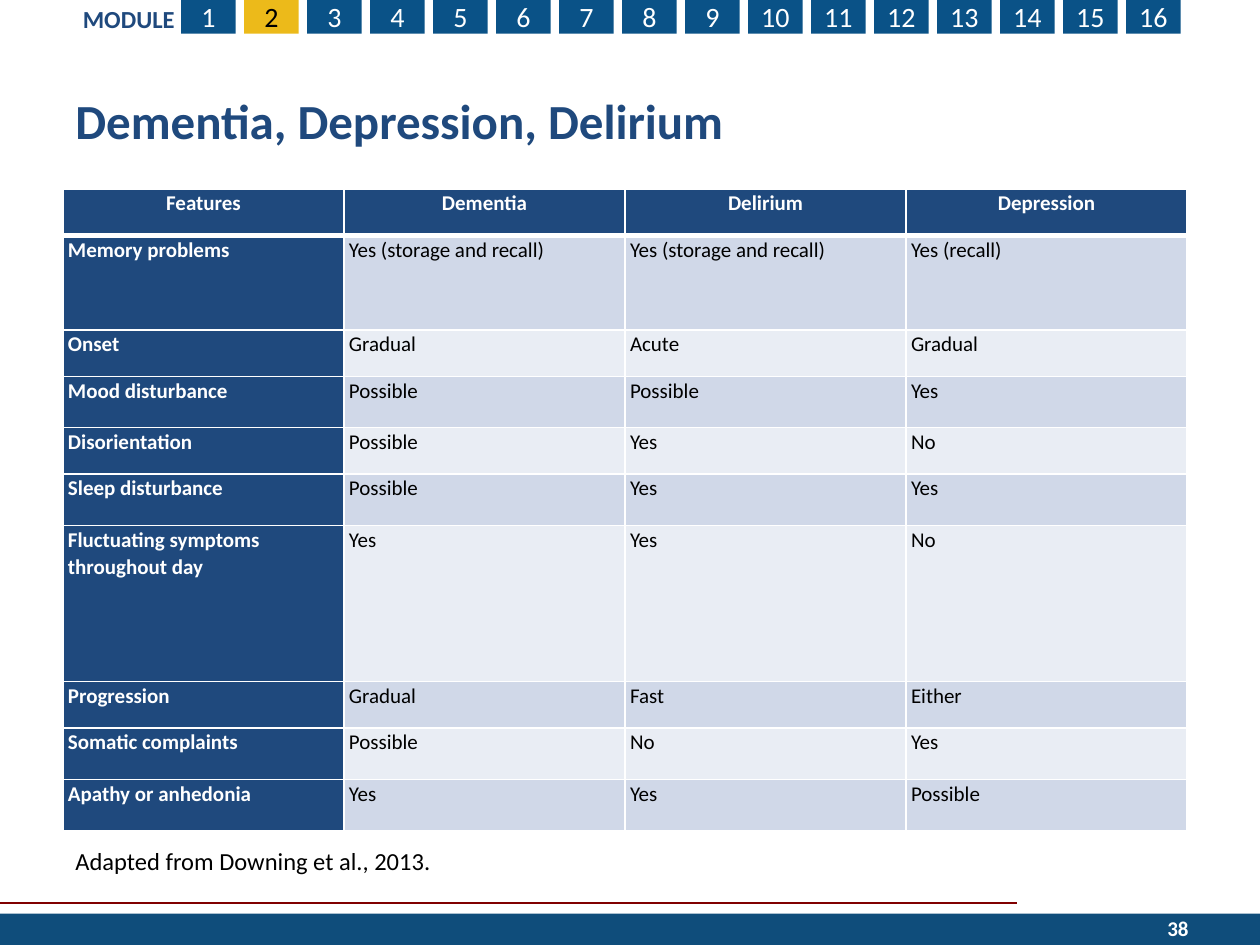
from dataclasses import dataclass

from lxml import etree
from pptx import Presentation
from pptx import util as u
from pptx.dml.color import RGBColor
from pptx.enum import shapes, text
from pptx.oxml import ns

FONT = "Calibri"
COLORS = {
    "white": "FFFFFF",
    "black": "000000",
    "navy": "1F497D",
    "footer": "0F4D7B",
    "tab": "0A5287",
    "current": "ECBA1A",
    "rule": "800000",
    "band_dark": "D0D8E8",
    "band_light": "E9EDF4",
}
MODULES, CURRENT_MODULE = 16, 2


@dataclass
class Area:
    left: float
    top: float
    width: float
    height: float

    def lengths(self) -> list:
        return [u.Cm(n) for n in (self.left, self.top, self.width, self.height)]


@dataclass
class Style:
    size: float
    color: str
    bold: bool = False
    align: text.PP_ALIGN = text.PP_ALIGN.LEFT
    anchor: text.MSO_ANCHOR = text.MSO_ANCHOR.TOP


@dataclass
class Feature:
    height: float
    values: tuple


def color(name: str) -> RGBColor:
    return RGBColor.from_string(COLORS[name])


def write(frame, words: str, style: Style):
    frame.text = words
    frame.word_wrap = True
    frame.vertical_anchor = style.anchor
    para = frame.paragraphs[0]
    para.alignment = style.align
    for span in para.runs:
        span.font.name = FONT
        span.font.size = u.Pt(style.size)
        span.font.bold = style.bold
        span.font.color.rgb = color(style.color)
    return para


def add_label(page, area: Area, words: str, style: Style) -> None:
    write(page.shapes.add_textbox(*area.lengths()).text_frame, words, style)


def add_block(page, area: Area, fill: str):
    block = page.shapes.add_shape(shapes.MSO_SHAPE.RECTANGLE, *area.lengths())
    block.shadow.inherit = False
    block.fill.solid()
    block.fill.fore_color.rgb = color(fill)
    block.line.fill.background()
    return block


def add_tab(page, number: int) -> None:
    current = number == CURRENT_MODULE
    area = Area(3.65 + 1.27 * (number - 1), -0.03, 1.1, 0.71)
    frame = add_block(page, area, "current" if current else "tab").text_frame
    frame.margin_left = frame.margin_right = 0
    frame.margin_top = frame.margin_bottom = 0
    write(frame, str(number), Style(16, "black" if current else "white",
                                    align=text.PP_ALIGN.CENTER,
                                    anchor=text.MSO_ANCHOR.MIDDLE))


def add_border(cell, side: str, points: float) -> None:
    properties = cell._tc.get_or_add_tcPr()
    line = etree.SubElement(properties, ns.qn(f"a:ln{side}"), w=str(u.Pt(points)))
    fill = etree.SubElement(line, ns.qn("a:solidFill"))
    etree.SubElement(fill, ns.qn("a:srgbClr"), val=COLORS["white"])


def fill_cell(cell, words: str, row: int, column: int) -> None:
    heading = row == 0 or column == 0
    cell.margin_left = cell.margin_right = u.Cm(0.1)
    cell.margin_top = cell.margin_bottom = 0
    align = text.PP_ALIGN.LEFT if row else text.PP_ALIGN.CENTER
    para = write(cell.text_frame, words,
                 Style(12, "white" if heading else "black", heading, align))
    para.line_spacing = 1.07
    para.space_after = u.Pt(8)
    # The rule under the header row is thicker than the others
    widths = {"L": 1, "R": 1, "T": 3 if row == 1 else 1, "B": 1 if row else 3}
    for side, points in widths.items():
        add_border(cell, side, points)
    band = "band_dark" if row % 2 else "band_light"
    cell.fill.solid()
    cell.fill.fore_color.rgb = color("navy" if heading else band)


def add_features(page, area: Area, features: list[Feature]) -> None:
    columns = len(features[0].values)
    table = page.shapes.add_table(len(features), columns, *area.lengths()).table
    for column in table.columns:
        column.width = u.Cm(area.width / columns)
    for row, feature in enumerate(features):
        table.rows[row].height = u.Cm(feature.height)
        for column, words in enumerate(feature.values):
            fill_cell(table.cell(row, column), words, row, column)


FEATURES = [
    Feature(0.94, ("Features", "Dementia", "Delirium", "Depression")),
    Feature(1.9, ("Memory problems", "Yes (storage and recall)",
                  "Yes (storage and recall)", "Yes (recall)")),
    Feature(0.94, ("Onset", "Gradual", "Acute", "Gradual")),
    Feature(1.03, ("Mood disturbance", "Possible", "Possible", "Yes")),
    Feature(0.94, ("Disorientation", "Possible", "Yes", "No")),
    Feature(1.03, ("Sleep disturbance", "Possible", "Yes", "Yes")),
    Feature(3.15, ("Fluctuating symptoms throughout day", "Yes", "Yes", "No")),
    Feature(0.94, ("Progression", "Gradual", "Fast", "Either")),
    Feature(1.03, ("Somatic complaints", "Possible", "No", "Yes")),
    Feature(1.03, ("Apathy or anhedonia", "Yes", "Yes", "Possible")),
]


def main() -> None:
    deck = Presentation()
    deck.slide_width, deck.slide_height = u.Cm(25.4), u.Cm(19.05)
    page = deck.slides.add_slide(deck.slide_layouts[6])

    # Footer rule and bar
    rule = page.shapes.add_connector(shapes.MSO_CONNECTOR.STRAIGHT,
                                     u.Cm(-0.03), u.Cm(18.2), u.Cm(20.5), u.Cm(18.2))
    rule.line.color.rgb = color("rule")
    rule.line.width = u.Pt(1.5)
    etree.SubElement(rule._element.spPr, ns.qn("a:effectLst"))
    add_block(page, Area(0, 18.42, 25.4, 0.63), "footer")

    # Module navigation
    add_label(page, Area(1.42, -0.05, 2.57, 0.86), "MODULE", Style(14, "navy", True))
    for number in range(1, MODULES + 1):
        add_tab(page, number)

    # Page number and title
    middle = text.MSO_ANCHOR.MIDDLE
    add_label(page, Area(18.29, 18.2, 5.92, 1.02), "38",
              Style(12, "white", True, text.PP_ALIGN.RIGHT, middle))
    add_label(page, Area(1.27, 2.1, 22.86, 0.64), "Dementia, Depression, Delirium",
              Style(28, "navy", True, anchor=middle))

    # Comparison table and its source
    height = sum(feature.height for feature in FEATURES)
    add_features(page, Area(1.27, 3.81, 22.66, height), FEATURES)
    add_label(page, Area(1.27, 16.94, 11.23, 0.86),
              "Adapted from Downing et al., 2013.", Style(14, "black"))

    deck.save("out.pptx")


if __name__ == "__main__":
    main()
